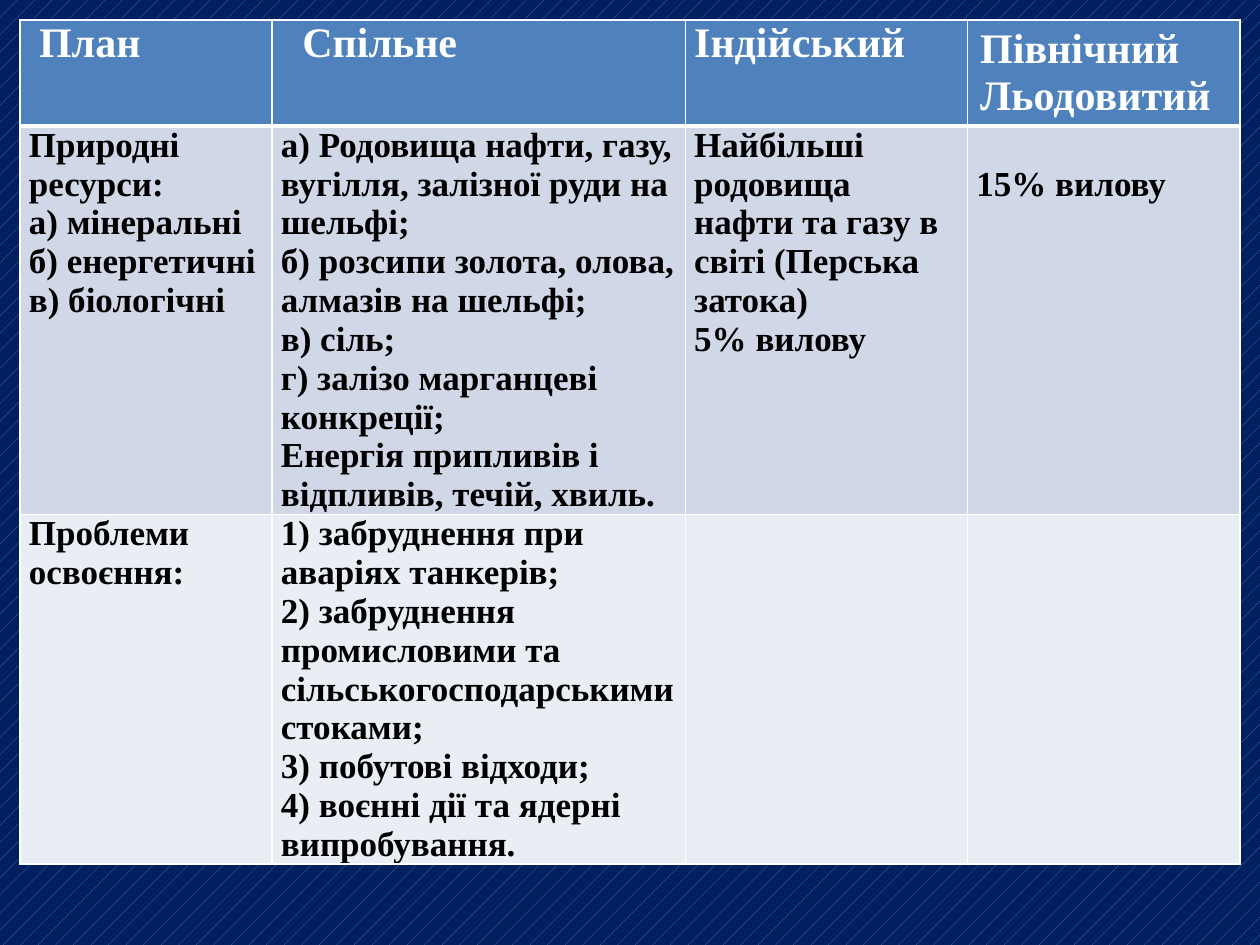
from dataclasses import dataclass

from lxml.etree import SubElement
from pptx import Presentation
from pptx.dml.color import RGBColor
from pptx.enum.dml import MSO_PATTERN_TYPE as Pattern
from pptx.oxml.ns import qn
from pptx.util import Inches, Pt


@dataclass(frozen=True)
class Theme:
    font: str = "Times New Roman"
    header_size: int = 24
    body_size: int = 20
    background: str = "002060"
    accent: str = "4F81BD"
    header_text: str = "FFFFFF"
    body_text: str = "000000"
    border: str = "FFFFFF"
    bands: tuple = ("D0D8E8", "E9EDF4")
    thin: int = 1
    thick: int = 3
    margins: tuple = (0.07, 0, 0.07, 0)


@dataclass(frozen=True)
class Entry:
    paragraphs: tuple = ()
    margins: tuple = Theme.margins


class SlideBuilder:
    GRID_COLUMNS = 100
    GRID_ROWS = 75

    def __init__(self, presentation, theme):
        self.theme = theme
        self.column = presentation.slide_width / self.GRID_COLUMNS
        self.row = presentation.slide_height / self.GRID_ROWS
        self.slide = presentation.slides.add_slide(presentation.slide_layouts[6])

    def background(self):
        fill = self.slide.background.fill
        fill.patterned()
        fill.pattern = Pattern.PERCENT_5
        fill.fore_color.rgb = RGBColor.from_string(self.theme.accent)
        fill.back_color.rgb = RGBColor.from_string(self.theme.background)

    def table(self, left, top, widths, heights, entries):
        frame = self.slide.shapes.add_table(
            len(heights), len(widths),
            round(left * self.column), round(top * self.row),
            round(sum(widths) * self.column), round(sum(heights) * self.row),
        )
        table = frame.table
        for column, width in zip(table.columns, widths):
            column.width = round(width * self.column)
        for row, height in zip(table.rows, heights):
            row.height = round(height * self.row)
        for row_index, row_entries in enumerate(entries):
            for column_index, entry in enumerate(row_entries):
                self.cell(table.cell(row_index, column_index), entry, row_index)

    def cell(self, cell, entry, row_index):
        theme = self.theme
        header = row_index == 0
        size = theme.header_size if header else theme.body_size
        color = theme.header_text if header else theme.body_text
        fill = theme.accent if header else theme.bands[(row_index - 1) % 2]

        (cell.margin_left, cell.margin_top,
         cell.margin_right, cell.margin_bottom) = map(Inches, entry.margins)
        self.borders(cell, row_index)
        cell.fill.solid()
        cell.fill.fore_color.rgb = RGBColor.from_string(fill)

        text_frame = cell.text_frame
        for index, text in enumerate(entry.paragraphs):
            paragraph = text_frame.add_paragraph() if index else text_frame.paragraphs[0]
            self.run(paragraph, text, size, color)

    def run(self, paragraph, text, size, color):
        run = paragraph.add_run()
        run.text = text
        run.font.name = self.theme.font
        run.font.size = Pt(size)
        run.font.bold = True
        run.font.color.rgb = RGBColor.from_string(color)

    def borders(self, cell, row_index):
        theme = self.theme
        widths = {
            "a:lnL": theme.thin,
            "a:lnR": theme.thin,
            "a:lnT": theme.thick if row_index == 1 else theme.thin,
            "a:lnB": theme.thick if row_index == 0 else theme.thin,
        }
        properties = cell._tc.get_or_add_tcPr()
        for tag, width in widths.items():
            line = SubElement(properties, qn(tag), w=str(Pt(width)))
            fill = SubElement(line, qn("a:solidFill"))
            SubElement(fill, qn("a:srgbClr"), val=theme.border)


ENTRIES = (
    (
        Entry(("План",), (0.15, 0, 0.07, 0)),
        Entry(("Спільне",), (0.24, 0, 0.07, 0)),
        Entry(("Індійський",)),
        Entry(("Північний Льодовитий",), (0.1, 0.05, 0.1, 0.05)),
    ),
    (
        Entry((
            "Природні ресурси:",
            "а) мінеральні",
            "б) енергетичні",
            "в) біологічні",
        )),
        Entry((
            "а) Родовища нафти, газу, вугілля, залізної руди на шельфі;",
            "б) розсипи золота, олова, алмазів на шельфі;",
            "в) сіль;",
            "г) залізо марганцеві конкреції;",
            "Енергія припливів і відпливів, течій, хвиль.",
        )),
        Entry((
            "Найбільші родовища нафти та газу в світі (Перська затока)",
            "5% вилову",
        )),
        Entry(("15% вилову",), (0.07, 0.31, 0.07, 0)),
    ),
    (
        Entry(("Проблеми освоєння:",)),
        Entry((
            "1) забруднення при аваріях танкерів;",
            "2) забруднення промисловими та сільськогосподарськими стоками;",
            "3) побутові відходи;",
            "4) воєнні дії та ядерні випробування.",
        )),
        Entry(),
        Entry(),
    ),
)


def main():
    presentation = Presentation()
    presentation.slide_width = Inches(10)
    presentation.slide_height = Inches(7.5)
    builder = SlideBuilder(presentation, Theme())
    builder.background()
    builder.table(
        left=1.6, top=1.6,
        widths=(20, 32.8, 22.4, 21.6),
        heights=(8.4, 30.8, 27.7),
        entries=ENTRIES,
    )
    presentation.save("out.pptx")


if __name__ == "__main__":
    main()
